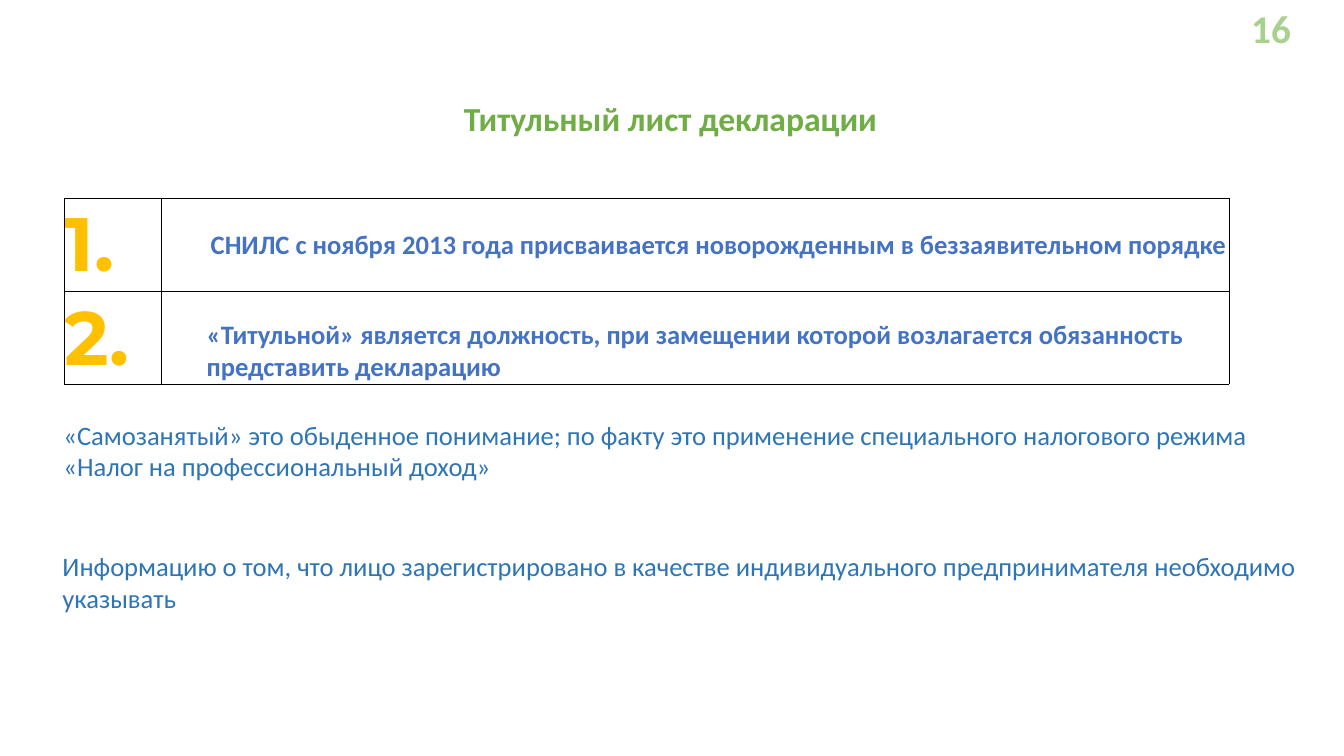
"""Build the slide about the title page of the declaration."""
from lxml.etree import SubElement
from pptx import Presentation
from pptx.dml.color import RGBColor
from pptx.enum.text import MSO_ANCHOR, PP_ALIGN
from pptx.oxml.ns import qn
from pptx.util import Inches, Pt

WHITE = RGBColor(0xFF, 0xFF, 0xFF)
PALE_GREEN = RGBColor(0xA9, 0xD1, 0x8E)
GREEN = RGBColor(0x70, 0xAD, 0x47)
GOLD = RGBColor(0xFF, 0xC0, 0x00)
BLUE = RGBColor(0x44, 0x72, 0xC4)
DEEP_BLUE = RGBColor(0x2E, 0x75, 0xB6)

# text, (left, top, width, height), size, colour, bold, alignment, wrap, line spacing
LABELS = [
    ("16", (12.41, 0.04, 0.42, 0.29), 28, PALE_GREEN, True,
     PP_ALIGN.LEFT, True, None),
    ("Титульный лист декларации", (4.59, 0.97, 4.12, 0.33), 24, GREEN, True,
     PP_ALIGN.CENTER, False, None),
    ("«Самозанятый» это обыденное понимание; по факту это применение "
     "специального налогового режима «Налог на профессиональный доход»",
     (0.63, 4.17, 11.76, 0.59), 19, DEEP_BLUE, False, PP_ALIGN.LEFT, True, 0.97),
    ("Информацию о том, что лицо зарегистрировано в качестве индивидуального "
     "предпринимателя необходимо указывать",
     (0.62, 5.46, 12.27, 0.59), 19, DEEP_BLUE, False, PP_ALIGN.LEFT, True, None),
]

# number, number anchor, statement, statement anchor, alignment, (margin, first line)
RULES = [
    ("1.", MSO_ANCHOR.TOP,
     "СНИЛС с ноября 2013 года присваивается новорожденным в беззаявительном порядке",
     MSO_ANCHOR.MIDDLE, PP_ALIGN.JUSTIFY, (0, 0.49)),
    ("2.", MSO_ANCHOR.BOTTOM,
     "«Титульной» является должность, при замещении которой возлагается "
     "обязанность представить декларацию",
     MSO_ANCHOR.BOTTOM, PP_ALIGN.LEFT, (0.45, 0)),
]
RULES_LEFT, RULES_TOP = 0.64, 1.97
COLUMN_WIDTHS = (0.96, 10.59)
ROW_HEIGHT = 0.92
BORDER_WIDTH = Pt(0.75)


def clear_margins(holder):
    holder.margin_left = holder.margin_right = 0
    holder.margin_top = holder.margin_bottom = 0


def write(paragraph, text, size, color, bold, align, font="Calibri"):
    paragraph.alignment = align
    run = paragraph.add_run()
    run.text = text
    run.font.name = font
    run.font.size = Pt(size)
    run.font.bold = bold
    run.font.color.rgb = color


def add_label(slide, text, place, size, color, bold, align, wrap, spacing):
    label = slide.shapes.add_textbox(*map(Inches, place))
    label.fill.solid()
    label.fill.fore_color.rgb = WHITE
    frame = label.text_frame
    clear_margins(frame)
    frame.word_wrap = wrap
    paragraph = frame.paragraphs[0]
    if spacing:
        paragraph.line_spacing = spacing
    write(paragraph, text, size, color, bold, align)


def prepare_cell(cell, anchor):
    clear_margins(cell)
    cell.vertical_anchor = anchor
    properties = cell._tc.get_or_add_tcPr()
    for side in ("a:lnL", "a:lnR", "a:lnT", "a:lnB"):
        border = SubElement(properties, qn(side), w=str(BORDER_WIDTH))
        SubElement(SubElement(border, qn("a:solidFill")), qn("a:srgbClr"), val="000000")
    cell.fill.background()
    return cell.text_frame.paragraphs[0]


def add_rules(slide):
    rules = slide.shapes.add_table(
        len(RULES), len(COLUMN_WIDTHS), Inches(RULES_LEFT), Inches(RULES_TOP),
        Inches(sum(COLUMN_WIDTHS)), Inches(ROW_HEIGHT * len(RULES))).table
    rules.first_row = rules.horz_banding = False
    for column, width in zip(rules.columns, COLUMN_WIDTHS):
        column.width = Inches(width)
    for row, rule in zip(rules.rows, RULES):
        number, number_anchor, statement, anchor, align, (margin, first_line) = rule
        row.height = Inches(ROW_HEIGHT)
        number_cell, statement_cell = row.cells
        write(prepare_cell(number_cell, number_anchor), number, 54, GOLD, True,
              PP_ALIGN.LEFT, "Montserrat")
        paragraph = prepare_cell(statement_cell, anchor)
        write(paragraph, statement, 19, BLUE, True, align)
        indents = paragraph._p.get_or_add_pPr()
        indents.set("marL", str(Inches(margin)))
        indents.set("indent", str(Inches(first_line)))


def main():
    deck = Presentation()
    deck.slide_width, deck.slide_height = Inches(13.33), Inches(7.5)
    slide = deck.slides.add_slide(deck.slide_layouts[6])
    for label in LABELS[:2]:
        add_label(slide, *label)
    add_rules(slide)
    for label in LABELS[2:]:
        add_label(slide, *label)
    deck.save("out.pptx")


if __name__ == "__main__":
    main()
